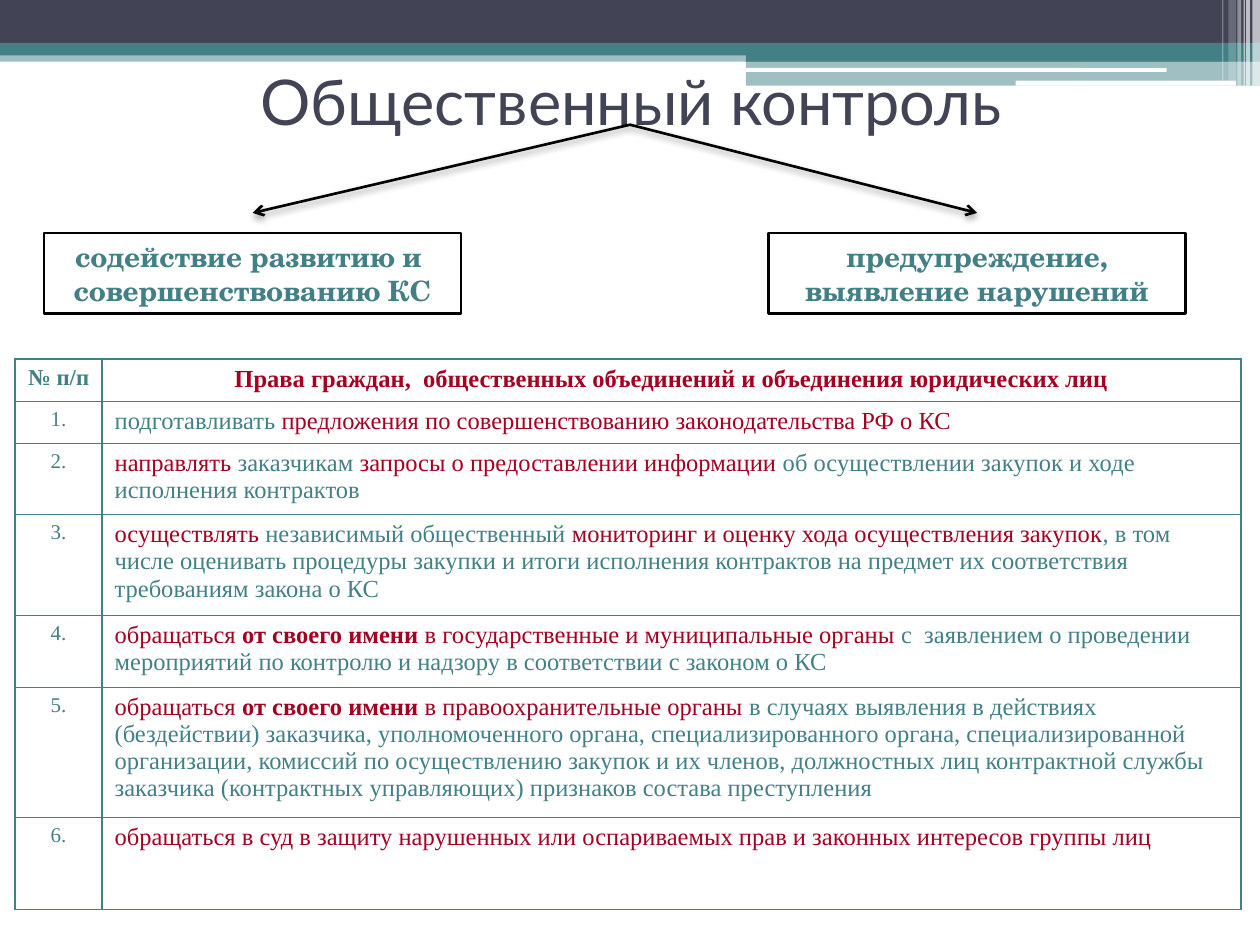
from dataclasses import dataclass

from lxml import etree
from pptx import Presentation
from pptx.dml.color import RGBColor
from pptx.enum.shapes import MSO_CONNECTOR, MSO_SHAPE
from pptx.enum.text import MSO_ANCHOR, MSO_AUTO_SIZE, PP_ALIGN
from pptx.oxml.ns import qn
from pptx.util import Inches, Pt

RECT, ROUND = MSO_SHAPE.RECTANGLE, MSO_SHAPE.ROUNDED_RECTANGLE
STRAIGHT = MSO_CONNECTOR.STRAIGHT
CENTER, LEFT = PP_ALIGN.CENTER, PP_ALIGN.LEFT
MIDDLE = MSO_ANCHOR.MIDDLE
GROW = MSO_AUTO_SIZE.SHAPE_TO_FIT_TEXT


@dataclass(frozen=True)
class Theme:
    navy: str = "424456"
    teal: str = "438086"
    red: str = "A50021"
    white: str = "FFFFFF"
    black: str = "000000"
    title_font: str = "Lato"
    box_font: str = "TeX Gyre Schola"
    table_font: str = "Times New Roman"
    title: int = 36
    box: int = 16
    body: int = 14
    head: int = 13
    number: int = 12
    line: float = 1.5
    outer: float = 1
    inner: float = 0.75


T = Theme()
W, H = 10, 7.5

TITLE = "Общественный контроль"
GOALS = [
    ["содействие развитию и ", "совершенствованию КС"],
    ["предупреждение, выявление нарушений"],
]
HEADERS = ["№ п/п", "Права граждан,  общественных объединений и объединения юридических лиц"]
R, N, B = (T.red, False), (T.teal, False), (T.red, True)
RIGHTS = [
    [("подготавливать ", N), ("предложения по совершенствованию законодательства РФ о КС", R)],
    [("направлять", R), (" заказчикам ", N), ("запросы о предоставлении информации", R),
     (" об осуществлении закупок и ходе исполнения контрактов", N)],
    [("осуществлять", R), (" независимый общественный ", N),
     ("мониторинг и оценку хода осуществления закупок", R),
     (", в том числе оценивать процедуры закупки и итоги исполнения контрактов "
      "на предмет их соответствия требованиям закона о КС", N)],
    [("обращаться ", R), ("от своего имени", B),
     (" в государственные и муниципальные органы", R),
     (" с  заявлением о проведении мероприятий по контролю и надзору "
      "в соответствии с законом о КС", N)],
    [("обращаться ", R), ("от своего имени", B), (" в правоохранительные органы", R),
     (" в случаях выявления в действиях (бездействии) заказчика, уполномоченного органа, "
      "специализированного органа, специализированной организации, комиссий по осуществлению "
      "закупок и их членов, должностных лиц контрактной службы заказчика "
      "(контрактных управляющих) признаков состава преступления", N)],
    [("обращаться в суд в защиту нарушенных или оспариваемых прав "
      "и законных интересов группы лиц", R)],
]
COLS = [0.69, 9.04]
ROWS = [0.33, 0.33, 0.51, 0.72, 0.54, 0.94, 0.73]
TABLE_AT = (0.12, 2.85, sum(COLS), 4.36)

BANDS = [
    (RECT, 0, 0.4, W, 0.09, T.teal, 50),
    (RECT, 0, 0, W, 0.34, T.navy, 100),
    (RECT, 0, 0.34, W, 0.1, T.teal, 100),
    (RECT, 5.92, 0.39, 4.08, 0.1, T.teal, 100),
    (RECT, 5.92, 0.48, 4.08, 0.2, T.teal, 50),
    (ROUND, 5.91, 0.54, 3.35, 0.03, T.white, 100),
    (ROUND, 8.06, 0.64, 1.75, 0.04, T.white, 100),
]
STRIPES = [(9.94, 0.06, 0.68, 65), (9.89, 0.03, 0.68, 65), (9.87, 0.01, 0.68, 60),
           (9.82, 0.03, 0.68, 40), (9.75, 0.06, 0.64, 20), (9.7, 0.01, 0.64, 30)]
BANDS += [(RECT, x, 0, w, h, T.white, alpha) for x, w, h, alpha in STRIPES]

BOX_X, BOX_Y, BOX_W, BOX_H = (0.35, 6.1), 1.85, 3.31, 0.64
ARROW_TOP, ARROW_END = (W / 2, 0.99), 1.69


def rgb(color):
    return RGBColor.from_string(color)


def node(parent, tag, **attrs):
    return etree.SubElement(parent, qn(tag), {k: str(v) for k, v in attrs.items()})


def style(p, font, size, color, bold=False, align=CENTER):
    p.alignment = align
    p.font.name, p.font.size, p.font.bold = font, Pt(size), bold
    p.font.color.rgb = rgb(color)


def add_band(shapes, kind, x, y, w, h, color, alpha):
    sp = shapes.add_shape(kind, Inches(x), Inches(y), Inches(w), Inches(h))
    sp.shadow.inherit = False
    sp.line.fill.background()
    sp.fill.solid()
    sp.fill.fore_color.rgb = rgb(color)
    if alpha < 100:
        node(sp.fill._xPr.find(".//" + qn("a:srgbClr")), "a:alpha", val=alpha * 1000)


def add_title(shapes):
    sp = shapes.add_textbox(Inches(0.51), Inches(0.44), Inches(9), Inches(0.71))
    tf = sp.text_frame
    tf.word_wrap, tf.vertical_anchor = True, MIDDLE
    tf.text = TITLE
    style(tf.paragraphs[0], T.title_font, T.title, T.navy)


def add_goal(shapes, x, lines):
    sp = shapes.add_shape(RECT, Inches(x), Inches(BOX_Y), Inches(BOX_W), Inches(BOX_H))
    sp.shadow.inherit = False
    sp.fill.solid()
    sp.fill.fore_color.rgb = rgb(T.white)
    sp.line.color.rgb = rgb(T.black)
    sp.line.width = Pt(T.line)
    tf = sp.text_frame
    tf.word_wrap, tf.auto_size = True, GROW
    tf.text = "\n".join(lines)
    for p in tf.paragraphs:
        style(p, T.box_font, T.box, T.teal, True)


def add_arrow(shapes, x):
    start, end = ARROW_TOP, (x, ARROW_END)
    sp = shapes.add_connector(STRAIGHT, *map(Inches, start + end))
    sp.line.color.rgb = rgb(T.black)
    sp.line.width = Pt(T.line)
    node(sp.line._get_or_add_ln(), "a:tailEnd", type="arrow")
    effects = node(sp._element.spPr, "a:effectLst")
    shadow = node(effects, "a:outerShdw", blurRad=Pt(4.1), dist=Pt(2),
                  dir=90 * 60000, rotWithShape=0)
    node(node(shadow, "a:srgbClr", val=T.black), "a:alpha", val=40000)


def set_borders(cell, row, col):
    tcPr = cell._tc.get_or_add_tcPr()
    edges = {"L": col == 0, "R": col == len(COLS) - 1,
             "T": row == 0, "B": row == len(ROWS) - 1}
    for side, outer in edges.items():
        ln = node(tcPr, f"a:ln{side}", w=Pt(T.outer if outer else T.inner))
        node(node(ln, "a:solidFill"), "a:srgbClr", val=T.teal)
    cell.fill.background()


def fill_cell(cell, runs, size, align):
    p = cell.text_frame.paragraphs[0]
    style(p, T.table_font, size, T.teal, align=align)
    spacing = etree.Element(qn("a:spcBef"))
    node(spacing, "a:spcPct", val=20000)
    p._p.get_or_add_pPr().insert(0, spacing)
    for text, (color, bold) in runs:
        r = p.add_run()
        r.text = text
        r.font.color.rgb, r.font.bold = rgb(color), bold


def add_rights(shapes):
    table = shapes.add_table(len(ROWS), len(COLS), *map(Inches, TABLE_AT)).table
    table.first_row = table.horz_banding = False
    for column, width in zip(table.columns, COLS):
        column.width = Inches(width)
    for row, height in zip(table.rows, ROWS):
        row.height = Inches(height)
    head = [([(HEADERS[0], (T.teal, True))], T.head, CENTER),
            ([(HEADERS[1], B)], T.body, CENTER)]
    body = [[([(f"{i}.", N)], T.number, CENTER), (runs, T.body, LEFT)]
            for i, runs in enumerate(RIGHTS, 1)]
    for row, cells in enumerate([head] + body):
        for col, content in enumerate(cells):
            cell = table.cell(row, col)
            fill_cell(cell, *content)
            set_borders(cell, row, col)


def main():
    prs = Presentation()
    prs.slide_width, prs.slide_height = Inches(W), Inches(H)
    shapes = prs.slides.add_slide(prs.slide_layouts[6]).shapes
    for band in BANDS:
        add_band(shapes, *band)
    add_title(shapes)
    for x, lines in zip(BOX_X, GOALS):
        add_goal(shapes, x, lines)
    add_rights(shapes)
    for x in BOX_X:
        add_arrow(shapes, x + BOX_W / 2)
    prs.save("out.pptx")


if __name__ == "__main__":
    main()
